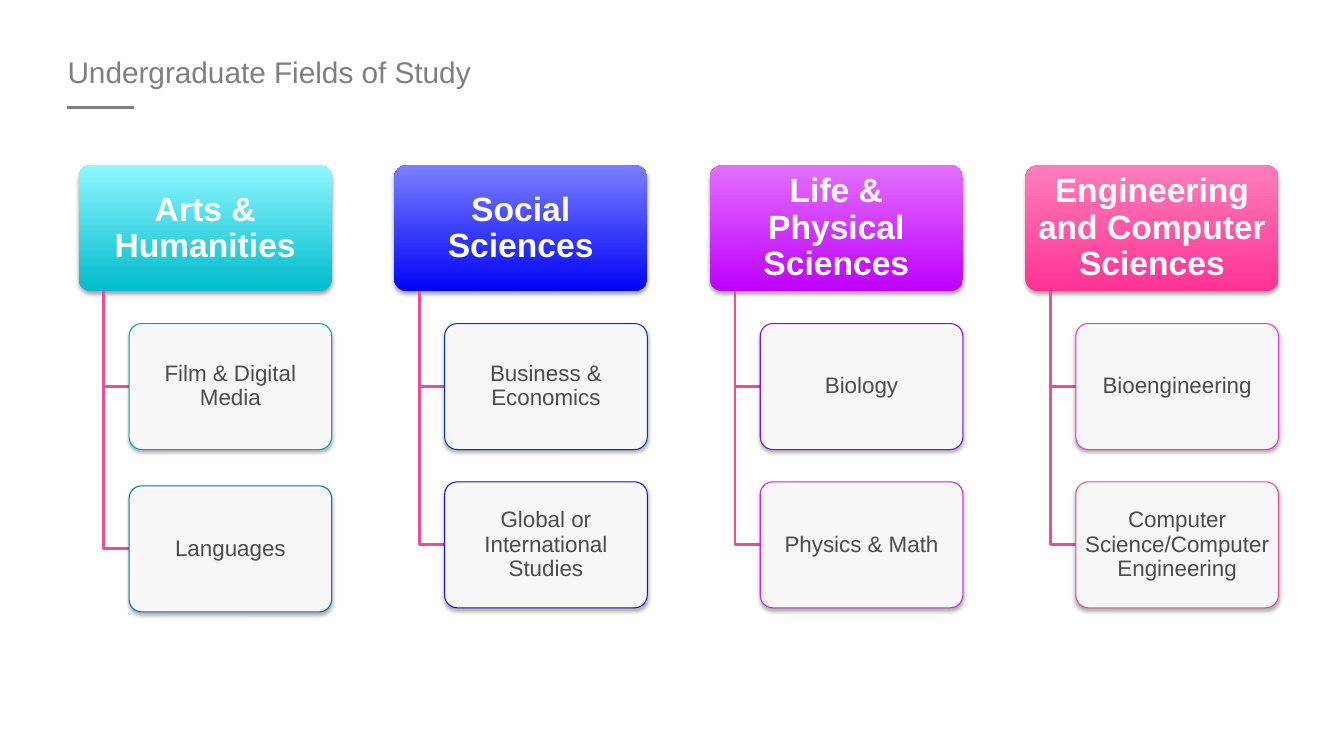
from dataclasses import dataclass

from lxml.etree import SubElement
from pptx import Presentation
from pptx.dml.color import RGBColor as RGB
from pptx.enum.shapes import MSO_CONNECTOR as CONN, MSO_SHAPE as SHAPE
from pptx.enum.text import MSO_ANCHOR as ANCHOR, PP_ALIGN as ALIGN
from pptx.oxml.ns import qn
from pptx.util import Inches, Pt

WHITE = RGB(0xFF, 0xFF, 0xFF)
BLACK = RGB(0x00, 0x00, 0x00)
GREY = RGB(0x7F, 0x7F, 0x7F)
DARK = RGB(0x4C, 0x4C, 0x4C)
PINK = RGB(0xEB, 0x4D, 0x97)

LEFT, TOP = 0.78, 1.64
COL, ROW = 3.13, 1.57
HEAD_W, BOX_W, BOX_H = 2.51, 2.01, 1.25
TRUNK, INDENT = 0.25, 0.5

TITLE_FONT = {"name": "Arial", "size": Pt(21.3)}
HEAD_FONT = {"name": "Arial", "size": Pt(24), "bold": True}
BOX_FONT = {"name": "Arial", "size": Pt(16)}


@dataclass(frozen=True)
class Major:
    name: str
    line: RGB
    drop: float = 0


@dataclass(frozen=True)
class Field:
    name: str
    low: RGB
    high: RGB
    majors: tuple[Major, ...]


FIELDS = (
    Field("Arts & Humanities", RGB(0x00, 0xBB, 0xCC), RGB(0x8E, 0xF7, 0xFF), (
        Major("Film & Digital Media", RGB(0x00, 0xA5, 0xB2)),
        Major("Languages", RGB(0x02, 0x6F, 0xC1), 0.04))),
    Field("Social Sciences", RGB(0x00, 0x03, 0xF6), RGB(0x7B, 0x7F, 0xFF), (
        Major("Business & Economics", RGB(0x06, 0x31, 0xD1)),
        Major("Global or International Studies", RGB(0x23, 0x09, 0xE1)))),
    Field("Life & Physical Sciences", RGB(0xBE, 0x00, 0xFF), RGB(0xE3, 0x6F, 0xFF), (
        Major("Biology", RGB(0x79, 0x0E, 0xEF)),
        Major("Physics & Math", RGB(0xCA, 0x21, 0xEE)))),
    Field("Engineering and Computer Sciences", RGB(0xFF, 0x33, 0x94), RGB(0xFF, 0x7D, 0xBC), (
        Major("Bioengineering", RGB(0xEC, 0x37, 0xCB)),
        Major("Computer Science/Computer Engineering", RGB(0xEB, 0x4B, 0x96)))),
)


def set_all(obj, values: dict) -> None:
    for key, value in values.items():
        setattr(obj, key, value)


def write(sp, text: str, font: dict, color: RGB, inset: tuple[float, float],
          anchor=ANCHOR.MIDDLE, align=ALIGN.CENTER, spacing: float = 0.9) -> None:
    tf = sp.text_frame
    dx, dy = map(Inches, inset)
    set_all(tf, {"word_wrap": True, "vertical_anchor": anchor, "margin_left": dx,
                 "margin_right": dx, "margin_top": dy, "margin_bottom": dy})
    p = tf.paragraphs[0]
    set_all(p, {"alignment": align, "line_spacing": spacing})
    r = p.add_run()
    r.text = text
    set_all(r.font, font)
    r.font.color.rgb = color


def add_shadow(sp) -> None:
    sp.shadow.inherit = False
    effects = sp._element.spPr.find(qn("a:effectLst"))
    outer = SubElement(effects, qn("a:outerShdw"), blurRad=str(Pt(3.1)),
                       dist=str(Pt(1.8)), dir="5400000", rotWithShape="0")
    color = SubElement(outer, qn("a:srgbClr"), val=str(BLACK))
    SubElement(color, qn("a:alpha"), val="35000")


def add_box(s, x: float, y: float, w: float):
    sp = s.shapes.add_shape(SHAPE.ROUNDED_RECTANGLE, *map(Inches, (x, y, w, BOX_H)))
    sp.adjustments[0] = 0.1
    add_shadow(sp)
    return sp


def add_head(s, field: Field, x: float) -> None:
    sp = add_box(s, x, TOP, HEAD_W)
    sp.fill.gradient()
    sp.fill.gradient_angle = 90
    for stop, color in zip(sp.fill.gradient_stops, (field.low, field.high)):
        stop.color.rgb = color
    sp.line.fill.background()
    write(sp, field.name, HEAD_FONT, WHITE, (0.05, 0.03))


def add_elbow(s, x: float, y: float) -> None:
    start = Inches(x + TRUNK), Inches(TOP + BOX_H)
    fb = s.shapes.build_freeform(*start, scale=1.0)
    fb.add_line_segments([(start[0], Inches(y)), (Inches(x + INDENT), Inches(y))], close=False)
    sp = fb.convert_to_shape()
    sp.shadow.inherit = False
    sp.fill.background()
    sp.line.color.rgb = PINK
    sp.line.width = Pt(2)


def add_major(s, major: Major, x: float, row: int) -> None:
    y = TOP + row * ROW + major.drop
    add_elbow(s, x, y + BOX_H / 2)
    sp = add_box(s, x + INDENT, y, BOX_W)
    sp.fill.solid()
    sp.fill.fore_color.rgb = WHITE
    color = sp._element.spPr.find(qn("a:solidFill")).find(qn("a:srgbClr"))
    SubElement(color, qn("a:alpha"), val="90000")
    sp.line.color.rgb = major.line
    sp.line.width = Pt(0.75)
    write(sp, major.name, BOX_FONT, DARK, (0.03, 0.02))


def add_title(s, text: str) -> None:
    rule = s.shapes.add_connector(CONN.STRAIGHT, *map(Inches, (0.66, 1.07, 1.33, 1.07)))
    rule.line.color.rgb = GREY
    rule.line.width = Pt(2)
    SubElement(rule._element.spPr, qn("a:effectLst"))
    sp = s.shapes.add_textbox(*map(Inches, (0.67, 0.53, 12, 0.36)))
    write(sp, text, TITLE_FONT, GREY, (0, 0), ANCHOR.TOP, ALIGN.LEFT, 1.0)


def main() -> None:
    prs = Presentation()
    prs.slide_width, prs.slide_height = Inches(13.33), Inches(7.5)
    s = prs.slides.add_slide(prs.slide_layouts[6])
    add_title(s, "Undergraduate Fields of Study")
    for col, field in enumerate(FIELDS):
        x = LEFT + col * COL
        add_head(s, field, x)
        for row, major in enumerate(field.majors, start=1):
            add_major(s, major, x, row)
    prs.save("out.pptx")


if __name__ == "__main__":
    main()
